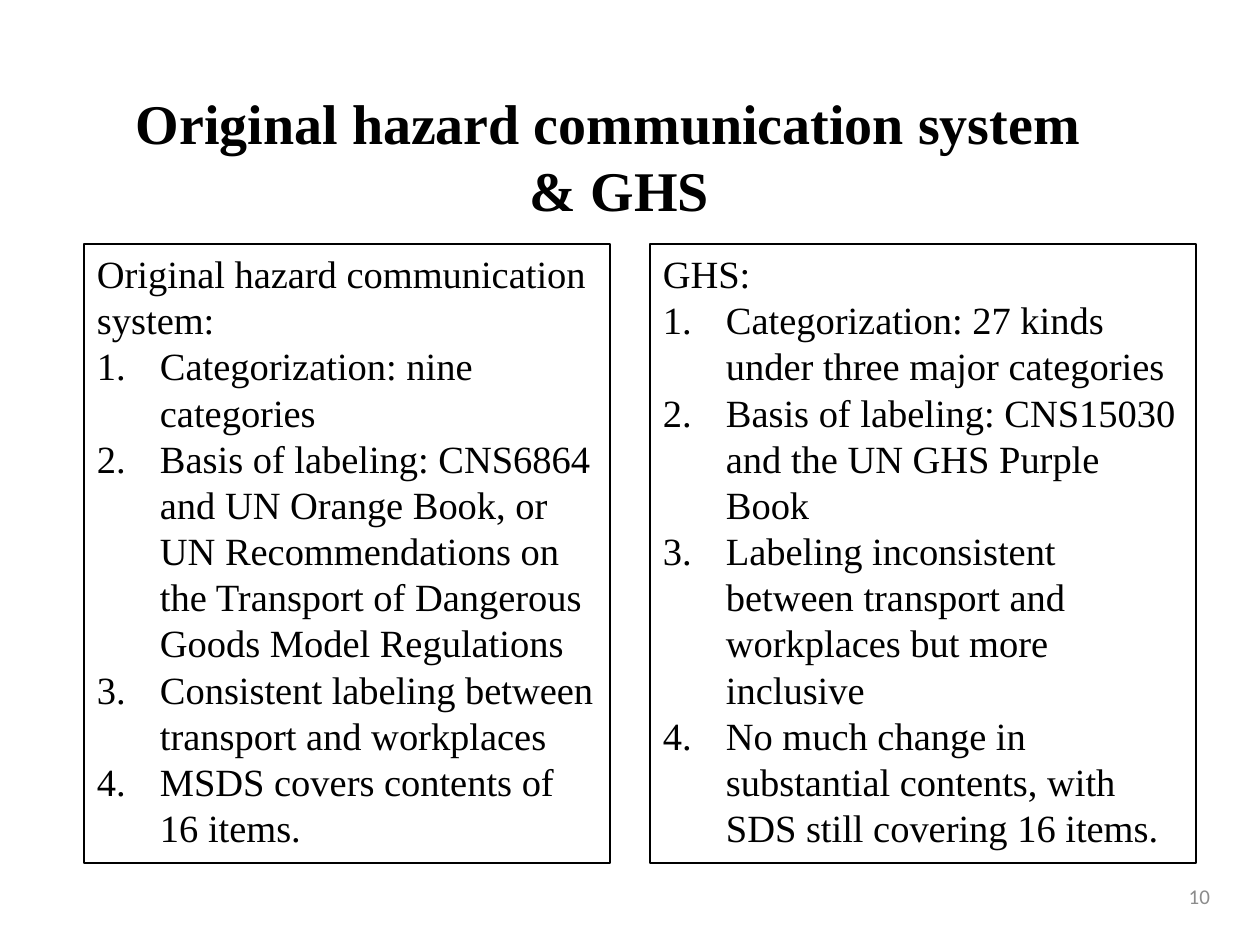
from lxml import etree
from pptx import Presentation
from pptx.dml.color import RGBColor
from pptx.enum.shapes import MSO_SHAPE
from pptx.enum.text import MSO_ANCHOR, MSO_AUTO_SIZE, PP_ALIGN
from pptx.oxml.ns import qn
from pptx.util import Emu, Pt

RECTANGLE = MSO_SHAPE.RECTANGLE
TOP, MIDDLE = MSO_ANCHOR.TOP, MSO_ANCHOR.MIDDLE
NO_FIT = MSO_AUTO_SIZE.NONE
LEFT, CENTER, RIGHT = PP_ALIGN.LEFT, PP_ALIGN.CENTER, PP_ALIGN.RIGHT

# Content
TITLE = ["Original hazard communication system", "& GHS"]
PAGE_NUMBER = "10"
SYSTEMS = [
    {
        "heading": "Original hazard communication system:",
        "left": 84, "width": 526,
        "points": [
            "Categorization: nine categories",
            "Basis of labeling: CNS6864 and UN Orange Book, or UN Recommendations "
            "on the Transport of Dangerous Goods Model Regulations",
            "Consistent labeling between transport and workplaces",
            "MSDS covers contents of 16 items.",
        ],
    },
    {
        "heading": "GHS:",
        "left": 650, "width": 546,
        "points": [
            "Categorization: 27 kinds under three major categories",
            "Basis of labeling: CNS15030 and the UN GHS Purple Book",
            "Labeling inconsistent between transport and workplaces but more inclusive",
            "No much change in substantial contents, with SDS still covering 16 items.",
        ],
    },
]

# Measures in px
PX = 914400 // 126
SLIDE_SIZE = (1260, 945)
TITLE_BOX = (123, 82, 993, 149)
PANEL_TOP, PANEL_HEIGHT = 244, 619
NUMBER_BOX = (929, 871, 294, 50)
NUMBER_INDENT = 63
INSET_X, INSET_Y = 13, 6
SERIF, SANS = "Times New Roman", "Calibri"


def px(length):
    return Emu(length * PX)


def color(hex_value):
    return RGBColor.from_string(hex_value)


def place(shape, box):
    shape.left, shape.top, shape.width, shape.height = map(px, box)


def number_paragraph(paragraph):
    properties = paragraph._p.get_or_add_pPr()
    properties.set("marL", str(px(NUMBER_INDENT)))
    properties.set("indent", str(-px(NUMBER_INDENT)))
    etree.SubElement(properties, qn("a:buAutoNum"), type="arabicPeriod")


def write(shape, lines, size, font=SERIF, ink="000000", bold=False,
          aligns=(LEFT,), anchor=TOP, numbered_from=None):
    frame = shape.text_frame
    frame.word_wrap = True
    frame.auto_size = NO_FIT
    frame.vertical_anchor = anchor
    frame.margin_left = frame.margin_right = px(INSET_X)
    frame.margin_top = frame.margin_bottom = px(INSET_Y)
    for index, line in enumerate(lines):
        paragraph = frame.paragraphs[0] if index == 0 else frame.add_paragraph()
        paragraph.alignment = aligns[min(index, len(aligns) - 1)]
        if numbered_from is not None and index >= numbered_from:
            number_paragraph(paragraph)
        run = paragraph.add_run()
        run.text = line
        run.font.name = font
        run.font.size = Pt(size)
        run.font.bold = bold
        run.font.color.rgb = color(ink)


prs = Presentation()
prs.slide_width, prs.slide_height = map(px, SLIDE_SIZE)
slide = prs.slides.add_slide(prs.slide_layouts[5])

# Title
title = slide.shapes.title
place(title, TITLE_BOX)
write(title, TITLE, 32, bold=True, aligns=(LEFT, CENTER))

# One framed panel for each system
for system in SYSTEMS:
    panel_box = (system["left"], PANEL_TOP, system["width"], PANEL_HEIGHT)
    panel = slide.shapes.add_shape(RECTANGLE, *map(px, panel_box))
    panel.shadow.inherit = False
    panel.fill.background()
    panel.line.color.rgb = color("000000")
    panel.line.width = Pt(0.75)
    write(panel, [system["heading"], *system["points"]], 22, numbered_from=1)

# Page number
page_number = slide.shapes.add_textbox(*map(px, NUMBER_BOX))
write(page_number, [PAGE_NUMBER], 12, font=SANS, ink="8C8C8C",
      aligns=(RIGHT,), anchor=MIDDLE)

prs.save("out.pptx")
